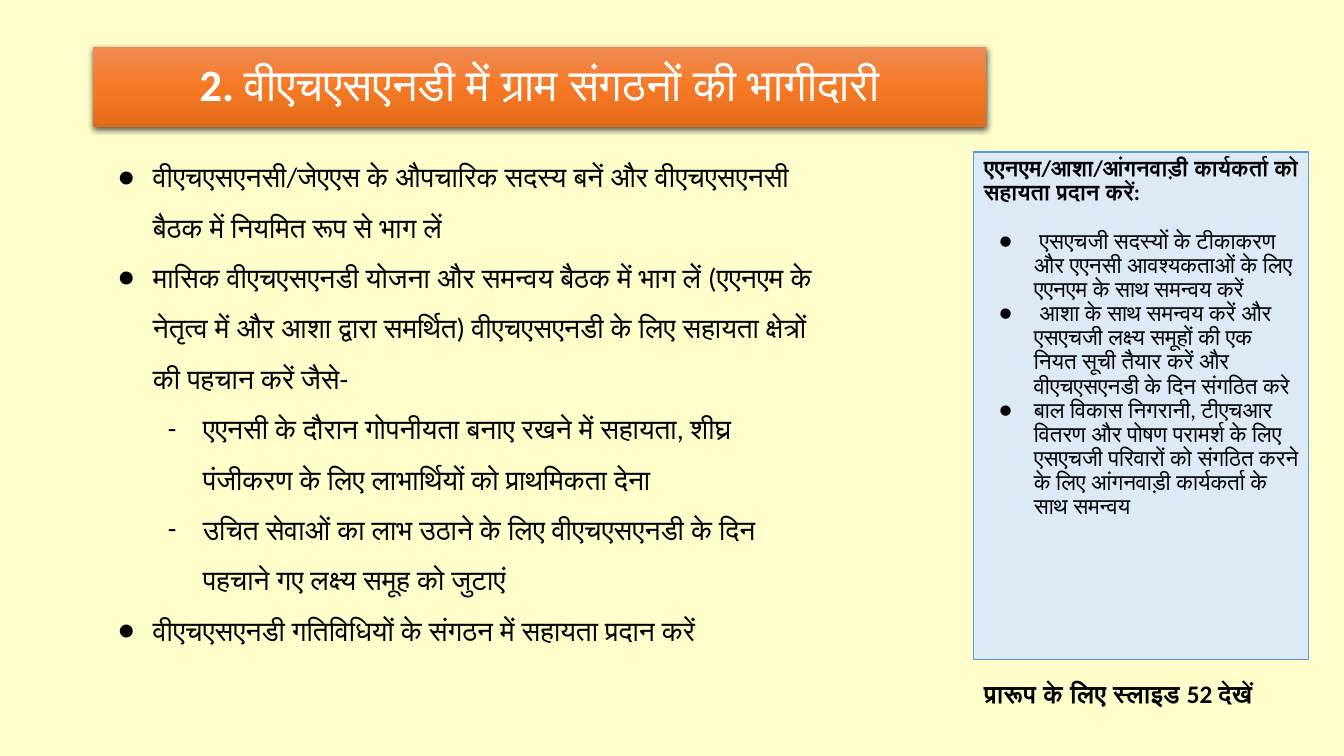
from lxml import etree
from pptx import Presentation
from pptx import util as u
from pptx.dml.color import RGBColor
from pptx.enum import shapes, text
from pptx.oxml.ns import qn

PX = 914400 / 100.8  # EMU per px
INK, WHITE = "000000", "FFFFFF"
HANG = 35  # hanging indent of every bullet


def px(n):
    return u.Emu(round(n * PX))


def color(hex_value):
    return RGBColor.from_string(hex_value)


def add_xml(parent, tag, **attributes):
    node = etree.SubElement(parent, qn(tag))
    for key, value in attributes.items():
        node.set(key, str(value))
    return node


def panel(slide, box):
    rect = slide.shapes.add_shape(shapes.MSO_SHAPE.RECTANGLE, *map(px, box))
    rect.shadow.inherit = False
    return rect


def text_frame(slide, box, anchor=text.MSO_ANCHOR.TOP):
    frame = slide.shapes.add_textbox(*map(px, box)).text_frame
    frame.word_wrap = True
    frame.vertical_anchor = anchor
    return frame


def write(frame, *runs, size, fill=INK, bold=False, align=None, spacing=1.0,
          before=0, bullet=None, indent=0, level=0):
    """Add a paragraph; a run is a string or a (string, bold) pair."""
    first = frame.paragraphs[0]
    para = frame.add_paragraph() if first.runs else first
    para.level = level
    para.line_spacing = spacing
    para.alignment = align
    if before:
        para.space_before = u.Pt(before)
    if bullet:
        props = para._p.get_or_add_pPr()
        props.set("marL", str(px(indent)))
        props.set("indent", str(-px(HANG)))
        add_xml(add_xml(props, "a:buClr"), "a:srgbClr", val=INK)
        add_xml(props, "a:buFont", typeface="Calibri")
        add_xml(props, "a:buChar", char=bullet)
    for item in runs:
        words, heavy = (item, bold) if isinstance(item, str) else item
        run = para.add_run()
        run.text = words
        run.font.name = "Calibri"
        run.font.size = u.Pt(size)
        run.font.bold = heavy
        run.font.color.rgb = color(fill)


def title_banner(slide, box):
    left, top, width, height = box
    banner = panel(slide, box)
    banner.line.fill.background()

    # Three-stop vertical gradient
    banner.fill.gradient()
    banner.fill.gradient_angle = 270
    props = banner._element.spPr
    stops = props.find(".//" + qn("a:gsLst"))
    for stop in list(stops):
        stops.remove(stop)
    for percent, shade in ((0, "F08B54"), (50, "F67A26"), (100, "E36A18")):
        add_xml(add_xml(stops, "a:gs", pos=percent * 1000), "a:srgbClr", val=shade)

    # Soft shadow below
    shadow = add_xml(props.find(qn("a:effectLst")), "a:outerShdw",
                     blurRad=u.Pt(4.5), dist=u.Pt(1.5), dir=5400000, rotWithShape=0)
    add_xml(add_xml(shadow, "a:srgbClr", val=INK), "a:alpha", val=63000)

    frame = text_frame(slide, (left, top + 9, width, height - 17), text.MSO_ANCHOR.MIDDLE)
    write(frame, ("2. ", True), "वीएचएसएनडी में ग्राम संगठनों की भागीदारी",
          size=32, fill=WHITE, align=text.PP_ALIGN.CENTER, spacing=0.9)


def main_points(slide, box):
    points = (
        (0, "वीएचएसएनसी/जेएएस के औपचारिक सदस्य बनें और वीएचएसएनसी बैठक में नियमित रूप से भाग लें"),
        (0, "मासिक वीएचएसएनडी योजना और समन्वय बैठक में भाग लें (एएनएम के नेतृत्व में और आशा द्वारा "
            "समर्थित) वीएचएसएनडी के लिए सहायता क्षेत्रों की पहचान करें जैसे-"),
        (1, "एएनसी के दौरान गोपनीयता बनाए रखने में सहायता, शीघ्र पंजीकरण के लिए लाभार्थियों को "
            "प्राथमिकता देना"),
        (1, "उचित सेवाओं का लाभ उठाने के लिए वीएचएसएनडी के दिन पहचाने गए लक्ष्य समूह को जुटाएं"),
        (0, "वीएचएसएनडी गतिविधियों के संगठन में सहायता प्रदान करें"),
    )
    frame = text_frame(slide, box)
    for level, point in points:
        write(frame, point, size=20, spacing=1.5, bullet="●-"[level],
              indent=50 * (level + 1), level=level)


def support_panel(slide, box):
    left, top, width, height = box
    support = panel(slide, box)
    support.fill.solid()
    support.fill.fore_color.rgb = color("DDEAF6")
    support.line.color.rgb = color("5B9BD5")
    support.line.width = u.Pt(0.75)

    frame = support.text_frame
    frame.word_wrap = True
    frame.vertical_anchor = text.MSO_ANCHOR.TOP
    left_align = text.PP_ALIGN.LEFT
    write(frame, "एएनएम/आशा/आंगनवाड़ी कार्यकर्ता को सहायता प्रदान करें:",
          size=16, bold=True, align=left_align, spacing=0.9)
    tasks = (
        " एसएचजी सदस्यों के टीकाकरण और एएनसी आवश्यकताओं के लिए एएनएम के साथ समन्वय करें",
        " आशा के साथ समन्वय करें और एसएचजी लक्ष्य समूहों की एक नियत सूची तैयार करें और "
        "वीएचएसएनडी के दिन संगठित करे",
        "बाल विकास निगरानी, टीएचआर वितरण और पोषण परामर्श के लिए एसएचजी परिवारों को संगठित "
        "करने के लिए आंगनवाड़ी कार्यकर्ता के साथ समन्वय",
    )
    for number, task in enumerate(tasks):
        write(frame, task, size=16, align=left_align, spacing=0.9, bullet="●",
              indent=50, before=0 if number else 17.5)

    # Cross-reference under the panel
    note = text_frame(slide, (left, top + height + 13, width, 40))
    write(note, "प्रारूप के लिए स्लाइड 52 देखें", size=18, bold=True)


def main():
    deck = Presentation()
    deck.slide_width, deck.slide_height = px(1344), px(756)
    slide = deck.slides.add_slide(deck.slide_layouts[6])
    slide.background.fill.solid()
    slide.background.fill.fore_color.rgb = color("FFFFCC")

    title_banner(slide, (93, 47, 893, 80))
    support_panel(slide, (974, 152, 335, 508))
    main_points(slide, (93, 138, 740, 617))
    deck.save("out.pptx")


if __name__ == "__main__":
    main()
